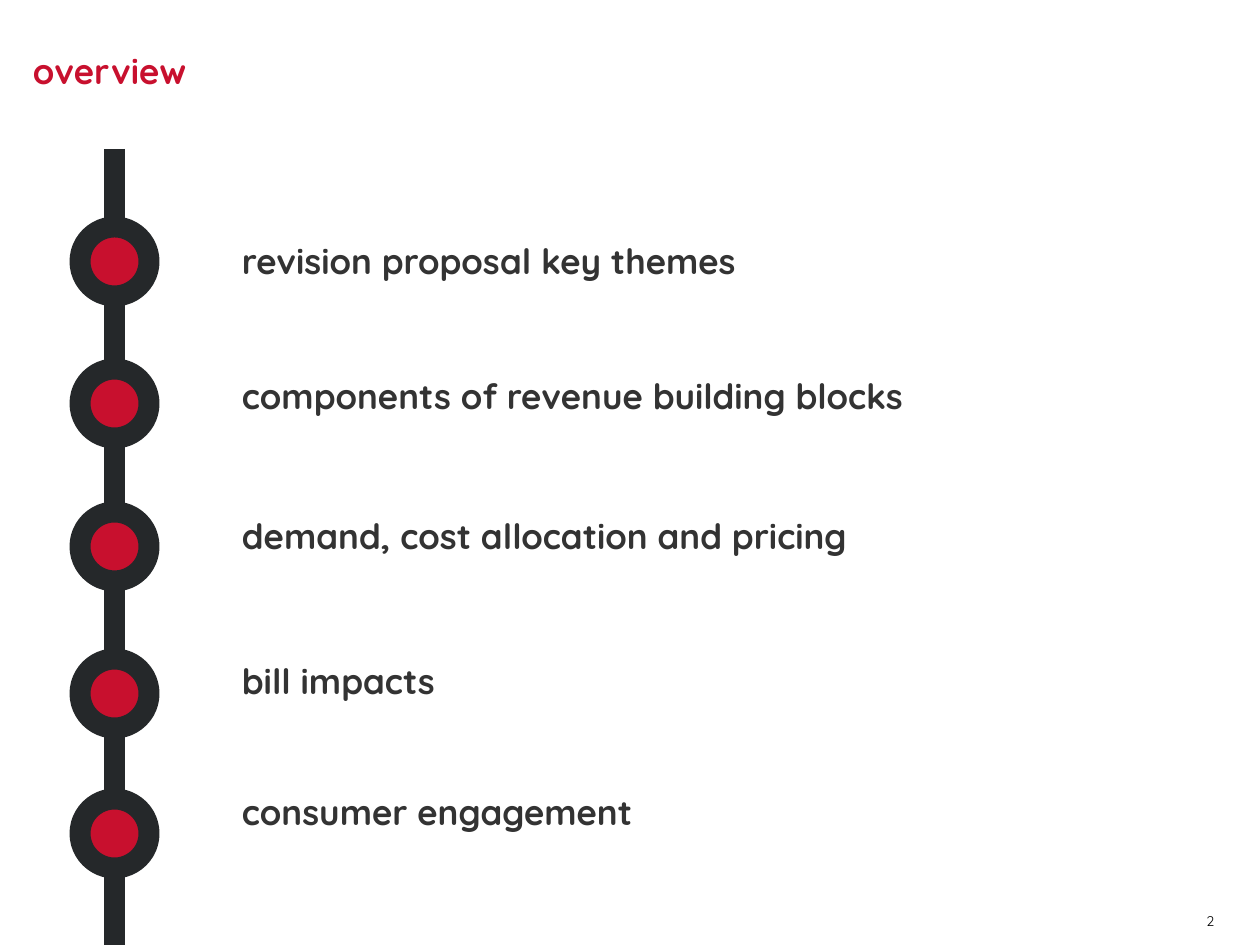
from pptx import Presentation
from pptx.dml.color import RGBColor
from pptx.enum.shapes import MSO_CONNECTOR, MSO_SHAPE
from pptx.enum.text import MSO_ANCHOR
from pptx.oxml.ns import qn
from pptx.util import Pt
from lxml import etree

STRAIGHT = MSO_CONNECTOR.STRAIGHT
OVAL = MSO_SHAPE.OVAL
TOP, BOTTOM = MSO_ANCHOR.TOP, MSO_ANCHOR.BOTTOM
EMU_PER_PX = 914400 / 126
FONT = "Quicksand"
RED, CHARCOAL, GREY, BLACK, WHITE = "C8102E", "25282A", "333333", "000000", "FFFFFF"


def px(length):
    return round(length * EMU_PER_PX)


def color(hex_code):
    return RGBColor.from_string(hex_code)


class TimelineSlide:
    """Draws the elements of a vertical timeline in one shared style."""

    def __init__(self, slide, rail_width=12):
        self.slide = slide
        self.rail_width = Pt(rail_width)

    def text(self, left, top, width, height, lines, size, ink, bold=True,
             gaps=(), anchor=TOP, inset=0, wrap=True, fill=None):
        box = self.slide.shapes.add_textbox(px(left), px(top), px(width), px(height))
        if fill:
            box.fill.solid()
            box.fill.fore_color.rgb = color(fill)
        frame = box.text_frame
        frame.word_wrap = wrap
        frame.vertical_anchor = anchor
        frame.margin_left = frame.margin_right = px(inset)
        frame.margin_top = frame.margin_bottom = px(inset / 2)
        frame.text = "\n".join(lines)
        for paragraph in frame.paragraphs:
            paragraph.font.name = FONT
            paragraph.font.size = Pt(size)
            paragraph.font.bold = bold
            paragraph.font.color.rgb = color(ink)
        for paragraph, gap in zip(frame.paragraphs[1:], gaps):
            paragraph.space_before = Pt(gap)

    def rail(self, x, top, bottom):
        rail = self.slide.shapes.add_connector(STRAIGHT, px(x), px(top), px(x), px(bottom))
        rail.line.color.rgb = color(CHARCOAL)
        rail.line.width = self.rail_width
        etree.SubElement(rail._element.spPr, qn("a:effectLst"))

    def stop(self, left, top, diameter):
        stop = self.slide.shapes.add_shape(OVAL, px(left), px(top), px(diameter), px(diameter))
        stop.shadow.inherit = False
        stop.fill.solid()
        stop.fill.fore_color.rgb = color(RED)
        stop.line.color.rgb = color(CHARCOAL)
        stop.line.width = self.rail_width


def main():
    deck = Presentation()
    deck.slide_width, deck.slide_height = px(1260), px(945)
    overview = TimelineSlide(deck.slides.add_slide(deck.slide_layouts[6]))

    overview.text(1194, 906, 43, 30, ["2"], 8, BLACK, bold=False, inset=12.6, wrap=False)
    overview.text(33, 29, 946, 63, ["overview"], 20, RED, anchor=BOTTOM, fill=WHITE)
    topics = [
        "revision proposal key themes",
        "components of revenue building blocks",
        "demand, cost allocation and pricing",
        "bill impacts",
        "consumer engagement",
    ]
    overview.text(242, 239, 756, 662, topics, 20, GREY, gaps=(53.5, 56, 59, 50.5))

    overview.rail(115, 149, 945)
    for stop_top in (227, 369, 512, 659, 799):
        overview.stop(80, stop_top, 69)

    deck.save("out.pptx")


if __name__ == "__main__":
    main()
